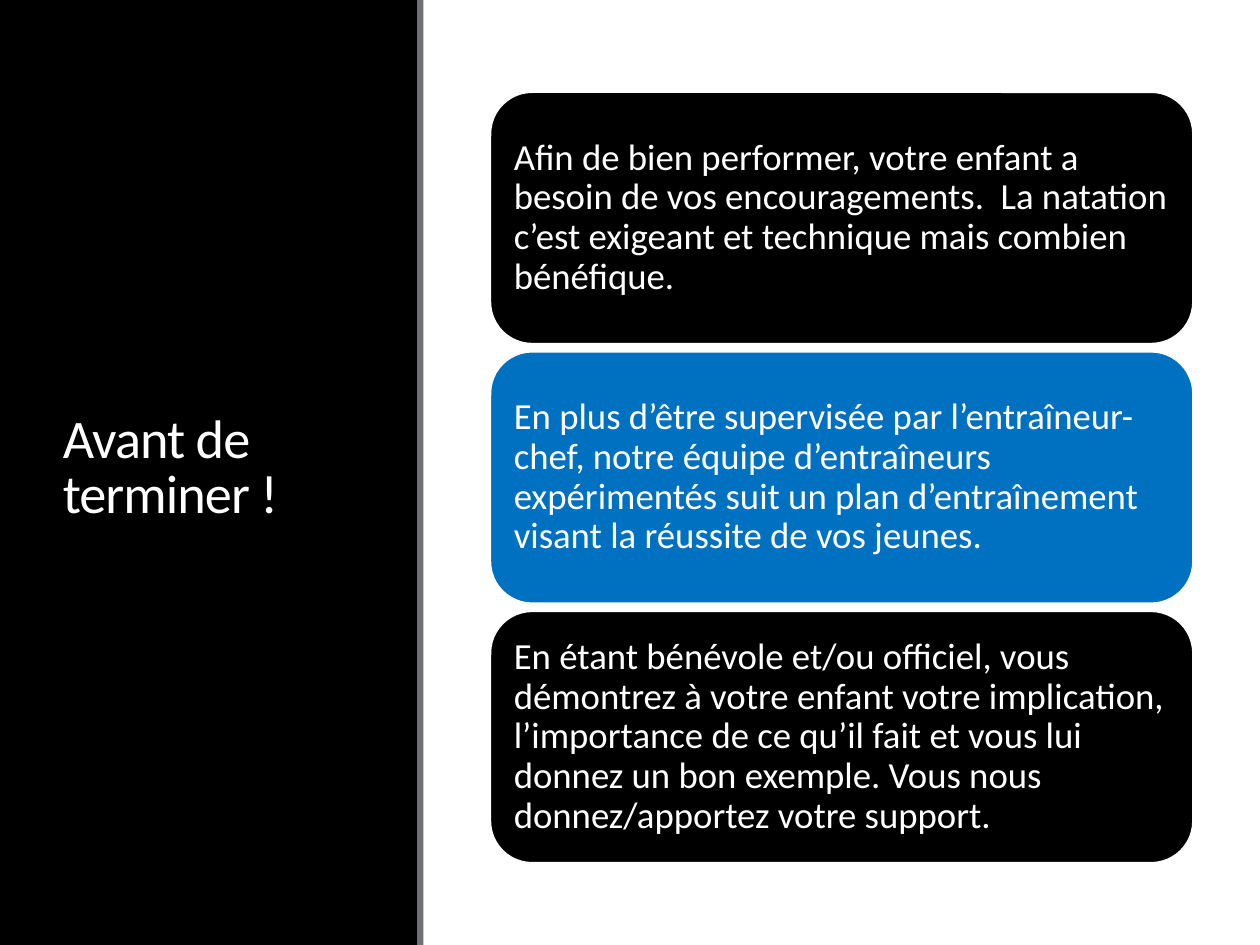
from pptx import Presentation
from pptx.dml.color import RGBColor
from pptx.enum.shapes import MSO_SHAPE
from pptx.enum.text import MSO_ANCHOR, PP_ALIGN
from pptx.util import Inches, Pt

TITLE = "Avant de terminer !"
CARDS = [
    ("000000", "Afin de bien performer, votre enfant a besoin de vos encouragements.  "
               "La natation c’est exigeant et technique mais combien bénéfique."),
    ("0070C0", "En plus d’être supervisée par l’entraîneur-chef, notre équipe "
               "d’entraîneurs expérimentés suit un plan d’entraînement visant la "
               "réussite de vos jeunes."),
    ("000000", "En étant bénévole et/ou officiel, vous démontrez à votre enfant votre "
               "implication, l’importance de ce qu’il fait et vous lui donnez un bon "
               "exemple. Vous nous donnez/apportez votre support."),
]
PANELS = [(0, 3.32, "000000"), (3.31, 0.05, "6F6F74")]
LEFT, TOP, WIDTH, HEIGHT, STEP = 3.89, 0.73, 5.58, 2, 2.06


def color(code):
    return RGBColor.from_string(code)


def add_box(slide, kind, place, fill):
    box = slide.shapes.add_shape(kind, *map(Inches, place))
    box.shadow.inherit = False
    box.fill.solid()
    box.fill.fore_color.rgb = color(fill)
    box.line.fill.background()
    return box


def write(shape, text, size, space, inset):
    frame = shape.text_frame
    frame.word_wrap = True
    frame.vertical_anchor = MSO_ANCHOR.MIDDLE
    frame.margin_left = frame.margin_right = Inches(inset)
    frame.margin_top = frame.margin_bottom = Inches(inset)
    line = frame.paragraphs[0]
    line.text = text
    line.alignment = PP_ALIGN.LEFT
    line.line_spacing = space
    line.font.name = "Calibri"
    line.font.size = Pt(size)
    line.font.color.rgb = color("FFFFFF")
    return line


def main():
    """Build the closing slide with a title panel and three stacked cards."""
    deck = Presentation()
    deck.slide_width, deck.slide_height = Inches(10), Inches(7.5)
    slide = deck.slides.add_slide(deck.slide_layouts[6])

    for left, width, fill in PANELS:
        add_box(slide, MSO_SHAPE.RECTANGLE, (left, 0, width, 7.5), fill)

    title = slide.shapes.add_textbox(*map(Inches, (0.4, 0.57, 2.53, 6.31)))
    line = write(title, TITLE, 31, 0.85, 0.1)
    line.runs[0].font._element.set("spc", "-50")

    for row, (fill, text) in enumerate(CARDS):
        place = (LEFT, TOP + row * STEP, WIDTH, HEIGHT)
        card = add_box(slide, MSO_SHAPE.ROUNDED_RECTANGLE, place, fill)
        card.line.color.rgb = color("FFFFFF")
        card.line.width = Pt(1.25)
        write(card, text, 21, 0.9, 0.09)

    deck.save("out.pptx")


if __name__ == "__main__":
    main()
